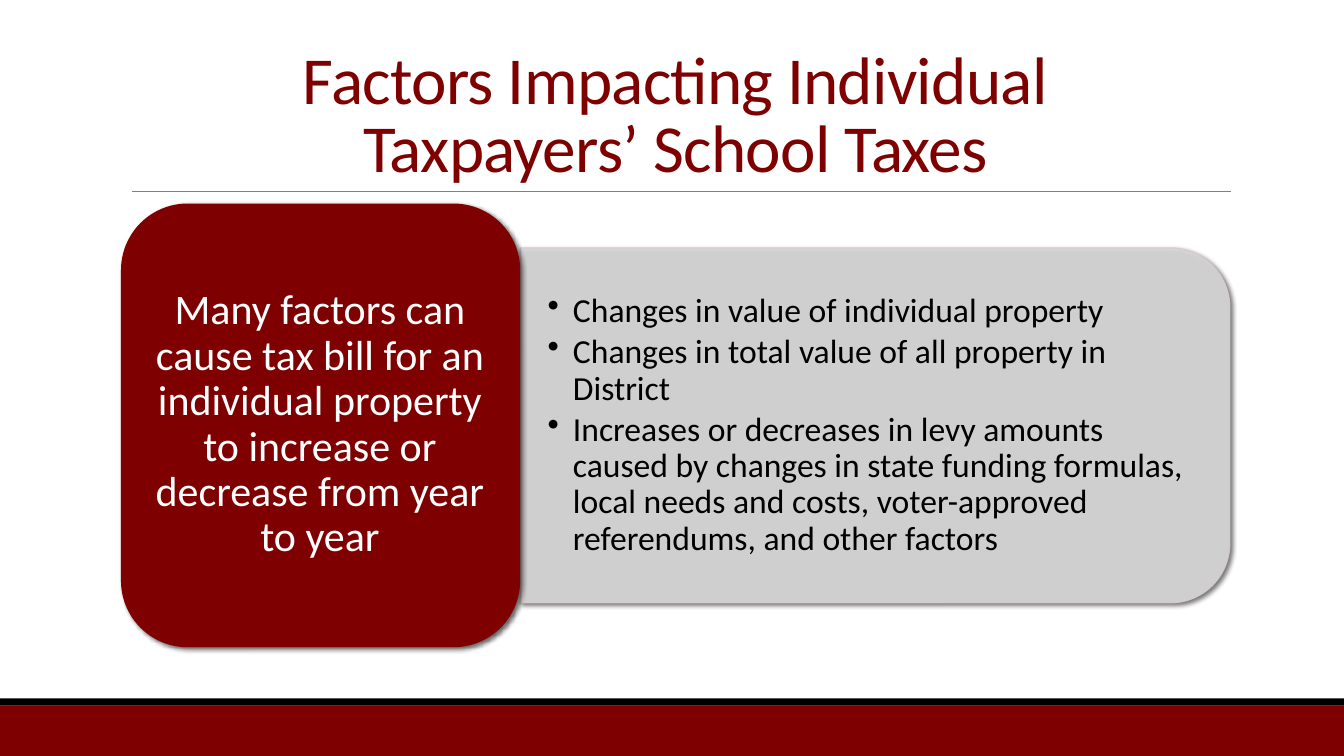
from dataclasses import dataclass
from typing import Optional

from lxml import etree
from pptx import Presentation, util as u
from pptx.dml import color
from pptx.enum import shapes, text
from pptx.oxml import ns

COLORS = {"maroon": "7E0000", "black": "000000", "white": "FFFFFF",
          "panel": "D9D9D9", "edge": "D8CCCC", "rule": "808080"}
FONT = "Calibri"


@dataclass(frozen=True)
class Box:
    left: float
    top: float
    width: float
    height: float

    def lengths(self) -> list[u.Cm]:
        return [u.Cm(v) for v in (self.left, self.top, self.width, self.height)]


@dataclass(frozen=True)
class Block:
    kind: shapes.MSO_SHAPE
    box: Box
    fill: str
    alpha: int = 100
    edge: Optional[str] = None
    rotation: int = 0
    shadow_blur: float = 0


@dataclass(frozen=True)
class Copy:
    lines: list[str]
    box: Box
    size: int
    ink: str
    spacing: float
    inset_x: float
    inset_y: float
    anchor: text.MSO_ANCHOR = text.MSO_ANCHOR.MIDDLE
    bulleted: bool = False
    tracking: int = 0
    space_after: float = 0


def rgb(name: str) -> color.RGBColor:
    return color.RGBColor.from_string(COLORS[name])


def add_node(parent, tag: str, **attributes):
    return etree.SubElement(parent, ns.qn(tag), attributes)


def set_alpha(fill_parent, percent: int) -> None:
    solid = fill_parent.find(ns.qn("a:solidFill"))
    add_node(solid[0], "a:alpha", val=str(percent * 1000))


def draw_block(slide, block: Block) -> None:
    shape = slide.shapes.add_shape(block.kind, *block.box.lengths())
    shape.rotation = block.rotation
    shape.shadow.inherit = False
    shape.fill.solid()
    shape.fill.fore_color.rgb = rgb(block.fill)
    properties = shape.fill._xPr
    if block.edge:
        shape.line.color.rgb = rgb(block.edge)
        shape.line.width = u.Pt(1)
        set_alpha(properties.find(ns.qn("a:ln")), block.alpha)
    else:
        shape.line.fill.background()
    if block.alpha < 100:
        set_alpha(properties, block.alpha)
    if block.shadow_blur:
        shadow = add_node(properties.find(ns.qn("a:effectLst")), "a:outerShdw",
                          blurRad=str(u.Pt(block.shadow_blur)), dist=str(u.Pt(2)),
                          dir="2700000", algn="br", rotWithShape="0")
        tint = add_node(shadow, "a:srgbClr", val=COLORS["black"])
        add_node(tint, "a:alpha", val="60000")


def write_copy(slide, copy: Copy) -> None:
    frame = slide.shapes.add_textbox(*copy.box.lengths()).text_frame
    frame.word_wrap = True
    frame.vertical_anchor = copy.anchor
    frame.margin_left = frame.margin_right = u.Cm(copy.inset_x)
    frame.margin_top = frame.margin_bottom = u.Cm(copy.inset_y)
    frame.text = "\n".join(copy.lines)
    for paragraph in frame.paragraphs:
        paragraph.line_spacing = copy.spacing
        paragraph.space_after = u.Pt(copy.space_after)
        paragraph.alignment = text.PP_ALIGN.LEFT if copy.bulleted else text.PP_ALIGN.CENTER
        paragraph.font.size = u.Pt(copy.size)
        if copy.bulleted:
            paragraph.level = 1
            properties = paragraph._p.get_or_add_pPr()
            indent = u.Cm(0.64)
            properties.set("marL", str(indent))
            properties.set("indent", str(-indent))
            bullet = etree.Element(ns.qn("a:buChar"), {"char": "•"})
            properties.find(ns.qn("a:defRPr")).addprevious(bullet)
        for run in paragraph.runs:
            run.font.name = FONT
            run.font.size = u.Pt(copy.size)
            run.font.color.rgb = rgb(copy.ink)
            if copy.tracking:
                run.font._element.set("spc", str(copy.tracking))


def draw_rule(slide, left: float, right: float, y: float) -> None:
    rule = slide.shapes.add_connector(shapes.MSO_CONNECTOR.STRAIGHT,
                                      u.Cm(left), u.Cm(y), u.Cm(right), u.Cm(y))
    rule.line.color.rgb = rgb("rule")
    rule.line.width = u.Pt(0.5)
    add_node(rule._element.spPr, "a:effectLst")


BLOCKS = [
    Block(shapes.MSO_SHAPE.RECTANGLE, Box(0, 17.78, 33.87, 1.27), "maroon"),
    Block(shapes.MSO_SHAPE.RECTANGLE, Box(0, 17.6, 33.87, 0.18), "black"),
    Block(shapes.MSO_SHAPE.ROUND_2_SAME_RECTANGLE, Box(17.58, 1.78, 8.94, 17.88),
          "panel", alpha=90, edge="edge", rotation=90, shadow_blur=3),
    Block(shapes.MSO_SHAPE.ROUNDED_RECTANGLE, Box(3.05, 5.13, 10.06, 11.18),
          "maroon", shadow_blur=3.5),
]

COPIES = [
    Copy(["Factors Impacting Individual\vTaxpayers’ School Taxes"],
         Box(3.05, 0.79, 27.94, 4.04), 48, "maroon", 0.85, 0.25, 0.13,
         anchor=text.MSO_ANCHOR.BOTTOM, tracking=-50),
    Copy(["Changes in value of individual property",
          "Changes in total value of all property in District",
          "Increases or decreases in levy amounts caused by changes in state funding "
          "formulas, local needs and costs, voter-approved referendums, and other factors"],
         Box(13.11, 6.68, 17.45, 8.08), 24, "black", 0.9, 0.69, 0.36,
         bulleted=True, space_after=3.6),
    Copy(["Many factors can cause tax bill for an individual property "
          "to increase or decrease from year to year"],
         Box(3.53, 5.61, 9.07, 10.19), 30, "white", 0.9, 0.3, 0.15),
]


def main() -> None:
    """Build the slide on factors behind individual school taxes."""
    deck = Presentation()
    deck.slide_width, deck.slide_height = u.Cm(33.87), u.Cm(19.05)
    slide = deck.slides.add_slide(deck.slide_layouts[6])
    for block in BLOCKS:
        draw_block(slide, block)
    draw_rule(slide, 3.33, 31.01, 4.83)
    for copy in COPIES:
        write_copy(slide, copy)
    deck.save("out.pptx")


if __name__ == "__main__":
    main()
